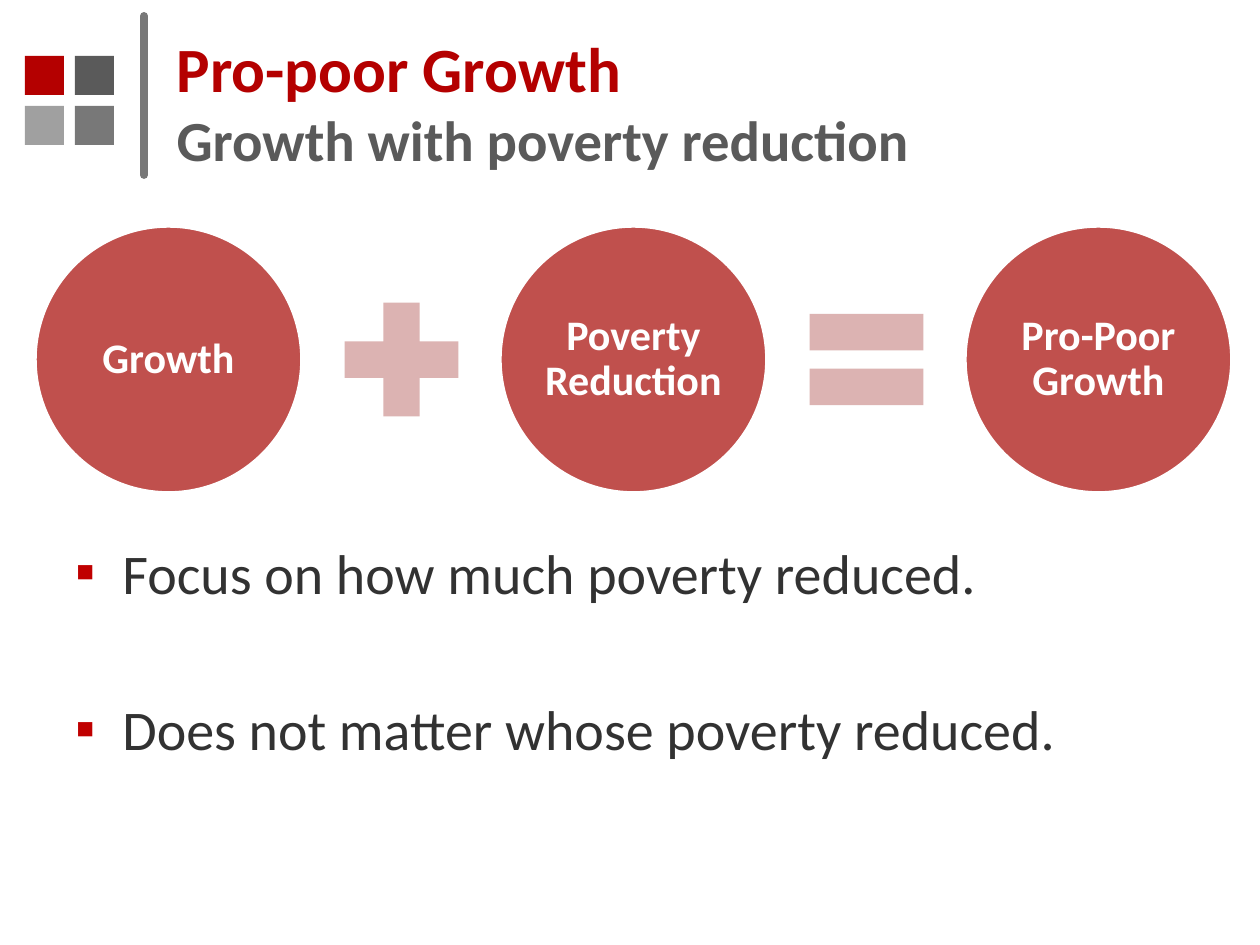
from lxml.etree import SubElement
from pptx import Presentation
from pptx.dml.color import RGBColor
from pptx.enum.shapes import MSO_CONNECTOR, MSO_SHAPE
from pptx.enum.text import MSO_ANCHOR, PP_ALIGN
from pptx.oxml.ns import qn
from pptx.util import Pt

PX = 914400 / 126
COLORS = {
    "red": "B40000", "dark": "5A5A5A", "mid": "787878", "light": "A0A0A0",
    "disc": "C0504D", "sign": "DCB3B2", "bullet": "C00000",
    "body": "323232", "white": "FFFFFF",
}


def px(n):
    return round(n * PX)


def color(name):
    return RGBColor.from_string(COLORS[name])


def add_text(par, text, size, hue, bold=False, align=None, line=None, before=None):
    par.alignment = align
    par.line_spacing = line
    if before is not None:
        par.space_before = Pt(before)
    run = par.add_run()
    run.text = text
    font = run.font
    font.name, font.size, font.bold = "Calibri", Pt(size), bold
    font.color.rgb = color(hue)


def add_shape(slide, kind, left, top, size, fill, edge=None):
    """Add a square-bounded preset shape, without a line unless edge is given."""
    shape = slide.shapes.add_shape(kind, px(left), px(top), px(size), px(size))
    shape.shadow.inherit = False
    shape.fill.solid()
    shape.fill.fore_color.rgb = color(fill)
    if edge:
        shape.line.color.rgb = color(edge)
        shape.line.width = Pt(2)
    else:
        shape.line.fill.background()
    return shape


def add_disc(slide, left, label):
    disc = add_shape(slide, MSO_SHAPE.OVAL, left, 226, 267, "disc", "white")
    frame = disc.text_frame
    frame.word_wrap = True
    frame.vertical_anchor = MSO_ANCHOR.MIDDLE
    frame.margin_left = frame.margin_right = px(4)
    frame.margin_top = frame.margin_bottom = px(4)
    add_text(frame.paragraphs[0], label, 24, "white", bold=True,
             align=PP_ALIGN.CENTER, line=0.9)


def add_rule(slide):
    rule = slide.shapes.add_connector(
        MSO_CONNECTOR.STRAIGHT, px(144), px(16), px(144), px(175))
    rule.line.color.rgb = color("mid")
    rule.line.width = Pt(4.5)
    props = rule._element.spPr
    props.get_or_add_ln().set("cap", "rnd")
    SubElement(props, qn("a:effectLst"))


def set_title(slide, head, sub):
    title = slide.shapes.title
    title.left, title.top, title.width, title.height = map(px, (164, 37, 1003, 129))
    frame = title.text_frame
    frame.word_wrap = True
    frame.vertical_anchor = MSO_ANCHOR.MIDDLE
    par = frame.paragraphs[0]
    add_text(par, head, 36, "red", bold=True, align=PP_ALIGN.LEFT)
    par.add_line_break()
    add_text(par, sub, 32.4, "dark", bold=True, align=PP_ALIGN.LEFT)


def set_bullet(par):
    props = par._p.get_or_add_pPr()
    props.set("marL", str(px(47)))
    props.set("indent", str(px(-47)))
    hue = SubElement(props, qn("a:buClr"))
    SubElement(hue, qn("a:srgbClr"), val=COLORS["bullet"])
    SubElement(props, qn("a:buFont"), typeface="Calibri")
    SubElement(props, qn("a:buChar"), char="▪")


def add_list(slide, items):
    box = slide.shapes.add_textbox(px(63), px(532), px(1134), px(312))
    frame = box.text_frame
    frame.word_wrap = True
    for i, item in enumerate(items):
        par = frame.add_paragraph() if i else frame.paragraphs[0]
        add_text(par, item, 32, "body", before=51 if i else 6)
        set_bullet(par)


def main():
    deck = Presentation()
    deck.slide_width, deck.slide_height = px(1260), px(945)
    slide = deck.slides.add_slide(deck.slide_layouts[5])

    for i, fill in enumerate(("red", "dark", "light", "mid")):
        row, col = divmod(i, 2)
        add_shape(slide, MSO_SHAPE.RECTANGLE, 25 + 50 * col, 56 + 50 * row, 39, fill)
    add_rule(slide)
    set_title(slide, "Pro-poor Growth", "Growth with poverty reduction")

    step = 465
    for i, label in enumerate(("Growth", "Poverty Reduction", "Pro-Poor Growth")):
        add_disc(slide, 35 + step * i, label)
    for i, kind in enumerate((MSO_SHAPE.MATH_PLUS, MSO_SHAPE.MATH_EQUAL)):
        add_shape(slide, kind, 324 + step * i, 282, 155, "sign")

    add_list(slide, ("Focus on how much poverty reduced.",
                     "Does not matter whose poverty reduced."))
    deck.save("out.pptx")


if __name__ == "__main__":
    main()
